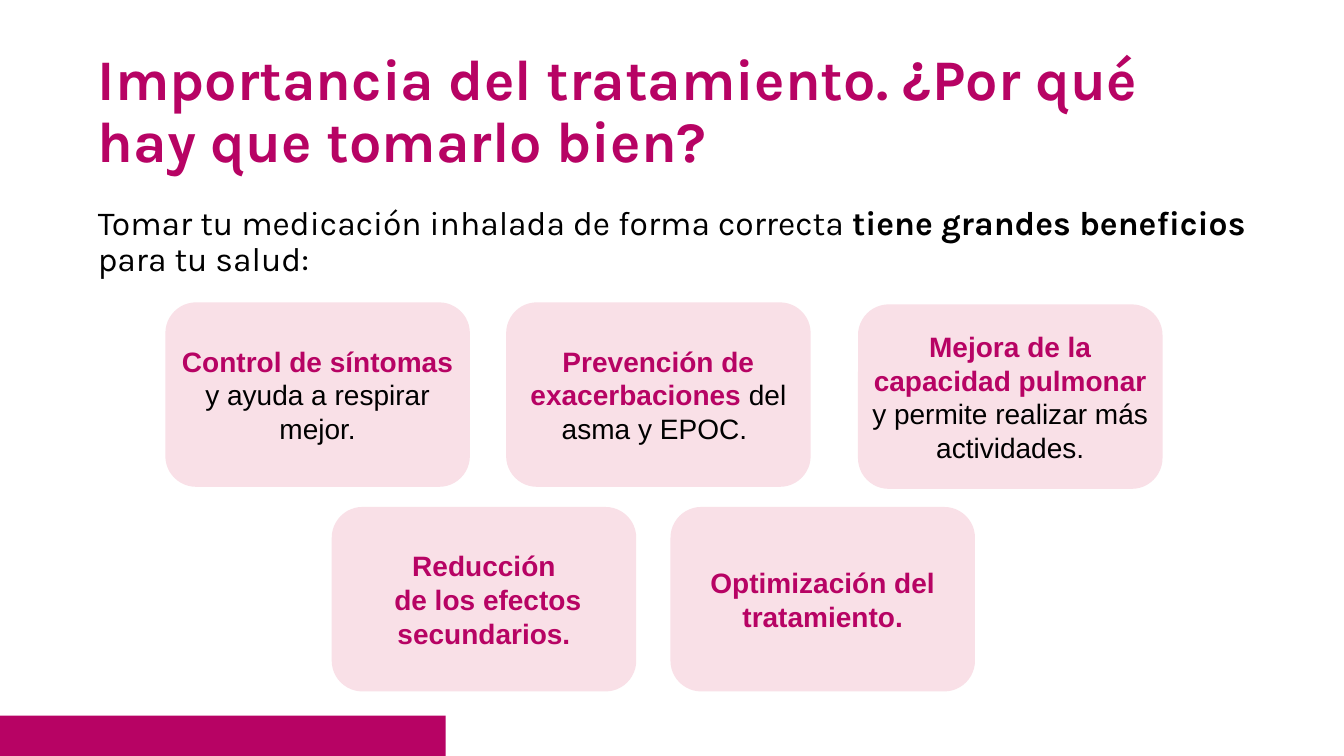
from pptx import Presentation
from pptx.dml.color import RGBColor
from pptx.enum.shapes import MSO_SHAPE
from pptx.enum.text import MSO_ANCHOR, MSO_AUTO_SIZE, PP_ALIGN
from pptx.oxml.ns import qn
from pptx.util import Inches, Pt

COLORS = {"magenta": "B70364", "pink": "F9E0E7", "black": "000000"}

presentation = Presentation()
presentation.slide_width = Inches(13.33)
presentation.slide_height = Inches(7.5)
slide = presentation.slides.add_slide(presentation.slide_layouts[1])


def add_block(left, top, width, height, color):
    kind = MSO_SHAPE.RECTANGLE if color == "magenta" else MSO_SHAPE.ROUNDED_RECTANGLE
    shape = slide.shapes.add_shape(kind, Inches(left), Inches(top), Inches(width), Inches(height))
    shape.shadow.inherit = False
    shape.fill.solid()
    shape.fill.fore_color.rgb = RGBColor.from_string(COLORS[color])
    shape.line.fill.background()
    return shape


def write_text(shape, paragraphs, font_name, size, align, anchor):
    """Each paragraph is a list of (text, color, bold) runs."""
    frame = shape.text_frame
    frame.word_wrap = True
    frame.auto_size = MSO_AUTO_SIZE.NONE
    frame.vertical_anchor = anchor
    frame.margin_left = frame.margin_right = Inches(0.05)
    frame.margin_top = frame.margin_bottom = Inches(0.05)
    for index, runs in enumerate(paragraphs):
        paragraph = frame.add_paragraph() if index else frame.paragraphs[0]
        paragraph.alignment = align
        paragraph.space_before = Pt(0)
        if shape.is_placeholder:
            paragraph.line_spacing = 0.9
            properties = paragraph._p.get_or_add_pPr()
            properties.set("marL", "0")
            properties.set("indent", "0")
            properties.append(properties.makeelement(qn("a:buNone"), {}))
        paragraph.font.name = font_name
        paragraph.font.size = Pt(size)
        for text, color, bold in runs:
            run = paragraph.add_run()
            run.text = text
            run.font.name = font_name
            run.font.size = Pt(size)
            run.font.bold = bold
            run.font.color.rgb = RGBColor.from_string(COLORS[color])


# Footer band
add_block(0, 7.1, 4.42, 0.4, "magenta")

# Title and introduction
title, body = slide.placeholders
title_text = [[("Importancia del tratamiento. ¿Por qué hay que tomarlo bien?", "magenta", True)]]
intro_text = [[
    ("Tomar tu medicación inhalada de forma correcta ", "black", False),
    ("tiene grandes beneficios ", "black", True),
    ("para tu salud:", "black", False),
]]
for placeholder, top, height, text, size, anchor in (
    (title, 0.4, 1.45, title_text, 41, MSO_ANCHOR.MIDDLE),
    (body, 2, 0.85, intro_text, 24, MSO_ANCHOR.TOP),
):
    placeholder.left, placeholder.top = Inches(0.92), Inches(top)
    placeholder.width, placeholder.height = Inches(11.5), Inches(height)
    write_text(placeholder, text, "Karla", size, PP_ALIGN.LEFT, anchor)

# Benefit cards: left, top, paragraphs
CARD_WIDTH, CARD_HEIGHT = 3.02, 1.83
benefits = [
    (1.64, 3, [[("Control de síntomas ", "magenta", True),
                ("y ayuda a respirar mejor.", "black", False)]]),
    (5.02, 3, [[("Prevención de exacerbaciones ", "magenta", True),
                ("del asma y EPOC. ", "black", False)]]),
    (8.51, 3.02, [[("Mejora de la capacidad pulmonar ", "magenta", True),
                   ("y permite realizar más actividades.", "black", False)]]),
    (3.29, 5.03, [[("Reducción", "magenta", True)],
                  [(" de los efectos secundarios.", "magenta", True)]]),
    (6.65, 5.03, [[("Optimización del tratamiento.", "magenta", True)]]),
]
for left, top, paragraphs in benefits:
    card = add_block(left, top, CARD_WIDTH, CARD_HEIGHT, "pink")
    write_text(card, paragraphs, "Arial", 20, PP_ALIGN.CENTER, MSO_ANCHOR.MIDDLE)

presentation.save("out.pptx")
